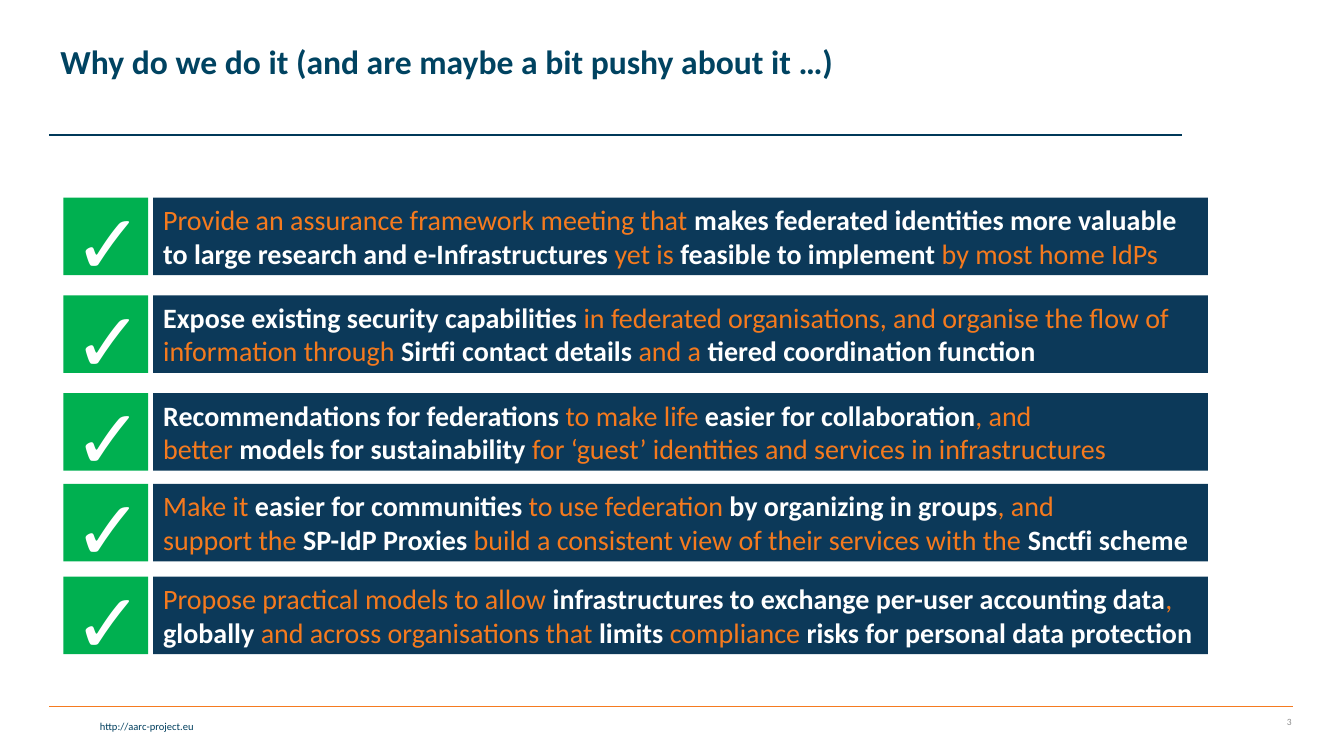
from pptx import Presentation
from pptx.util import Inches, Pt
from pptx.dml.color import RGBColor
from pptx.enum.shapes import MSO_SHAPE, MSO_CONNECTOR
from pptx.enum.text import PP_ALIGN as Align, MSO_ANCHOR as Anchor, MSO_AUTO_SIZE as Fit
from pptx.oxml.ns import qn
from lxml.etree import SubElement

TITLE = "Why do we do it (and are maybe a bit pushy about it …)"
# Top of each row and its text; words between asterisks are bold white
GOALS = [
    (1.96, "Provide an assurance framework meeting that *makes federated identities "
           "more valuable to large research and e-Infrastructures *yet is "
           "*feasible to implement *by most home IdPs"),
    (2.93, "*Expose existing security capabilities *in federated organisations, and "
           "organise the flow of information through *Sirtfi contact details *and a "
           "*tiered coordination function*"),
    (3.9, "*Recommendations for federations *to make life *easier for collaboration*, and \n"
          "better *models for sustainability *for ‘guest’ identities and services "
          "in infrastructures"),
    (4.8, "Make it *easier for communities *to use federation *by organizing in groups*, and \n"
          "support the *SP-IdP Proxies *build a consistent view of their services "
          "with the *Snctfi scheme*"),
    (5.72, "Propose practical models to allow *infrastructures to exchange per-user "
           "accounting data*, *globally *and across organisations that *limits "
           "*compliance *risks for personal data protection*"),
]
# Text, box, size, colour
SMALL = [
    ("http://aarc-project.eu", (0.03, 7.09, 1.99, 0.23), 7.5, "link", Anchor.TOP),
    ("3", (12.1, 7.01, 0.81, 0.3), 6.8, "gray", Anchor.MIDDLE),
]
# Left, right, height, colour
RULES = [(0.49, 12.82, 7.01, "rule"), (0.49, 11.72, 1.34, "line")]
COLORS = {"title": "004361", "link": "003F5E", "gray": "8C8C8C", "rule": "F57B20",
          "line": "003959", "tick": "00B050", "bar": "0C3959", "plain": "F57A1E",
          "white": "FFFFFF"}
ROW_H = 0.77


def rgb(name):
    return RGBColor.from_string(COLORS[name])


def style(font, size, color, face="Calibri", bold=False):
    font.name, font.size, font.bold = face, Pt(size), bold
    font.color.rgb = rgb(color)


def add_rect(box, color):
    rect = slide.shapes.add_shape(MSO_SHAPE.RECTANGLE, *map(Inches, box))
    rect.shadow.inherit = False
    rect.fill.solid()
    rect.fill.fore_color.rgb = rgb(color)
    rect.line.fill.background()
    return rect


def add_label(text, box, size, color, face="Calibri", align=Align.LEFT, anchor=Anchor.TOP):
    frame = slide.shapes.add_textbox(*map(Inches, box)).text_frame
    frame.word_wrap = True
    frame.vertical_anchor = anchor
    para = frame.paragraphs[0]
    para.text, para.alignment = text, align
    style(para.font, size, color, face)


def add_goal(top, text):
    add_rect((0.63, top, 0.84, ROW_H), "tick")
    frame = add_rect((1.52, top, 10.46, ROW_H), "bar").text_frame
    frame.word_wrap = True
    frame.vertical_anchor = Anchor.TOP
    para = frame.paragraphs[0]
    para.alignment = Align.LEFT
    for i, part in enumerate(text.split("*")):
        bold = i % 2 == 1
        for j, line in enumerate(part.split("\n")):
            if j:
                para.add_line_break()
            if line:
                run = para.add_run()
                run.text = line
                style(run.font, 20, "white" if bold else "plain", bold=bold)
    add_label("✓", (0.63, top - 0.12, 0.7, 1.11), 60, "white", "Arial")


prs = Presentation()
prs.slide_width, prs.slide_height = Inches(13.33), Inches(7.5)
slide = prs.slides.add_slide(prs.slide_layouts[5])

# Title
title = slide.shapes.title
title.left, title.top, title.width, title.height = map(Inches, (0.5, 0.08, 10.51, 1.11))
title.text_frame.auto_size = Fit.NONE
title.text_frame.vertical_anchor = Anchor.MIDDLE
head = title.text_frame.paragraphs[0]
head.text, head.alignment, head.line_spacing = TITLE, Align.LEFT, 0.9
style(head.font, 24, "title", bold=True)

# Rules above and below the goals
for left, right, y, color in RULES:
    rule = slide.shapes.add_connector(
        MSO_CONNECTOR.STRAIGHT, *map(Inches, (left, y, right, y)))
    rule.line.color.rgb = rgb(color)
    rule.line.width = Pt(1)
    SubElement(rule._element.spPr, qn("a:effectLst"))

# Footer
for text, box, size, color, anchor in SMALL:
    add_label(text, box, size, color, align=Align.RIGHT, anchor=anchor)

# Goals with ticks
for top, text in GOALS:
    add_goal(top, text)

prs.save("out.pptx")
